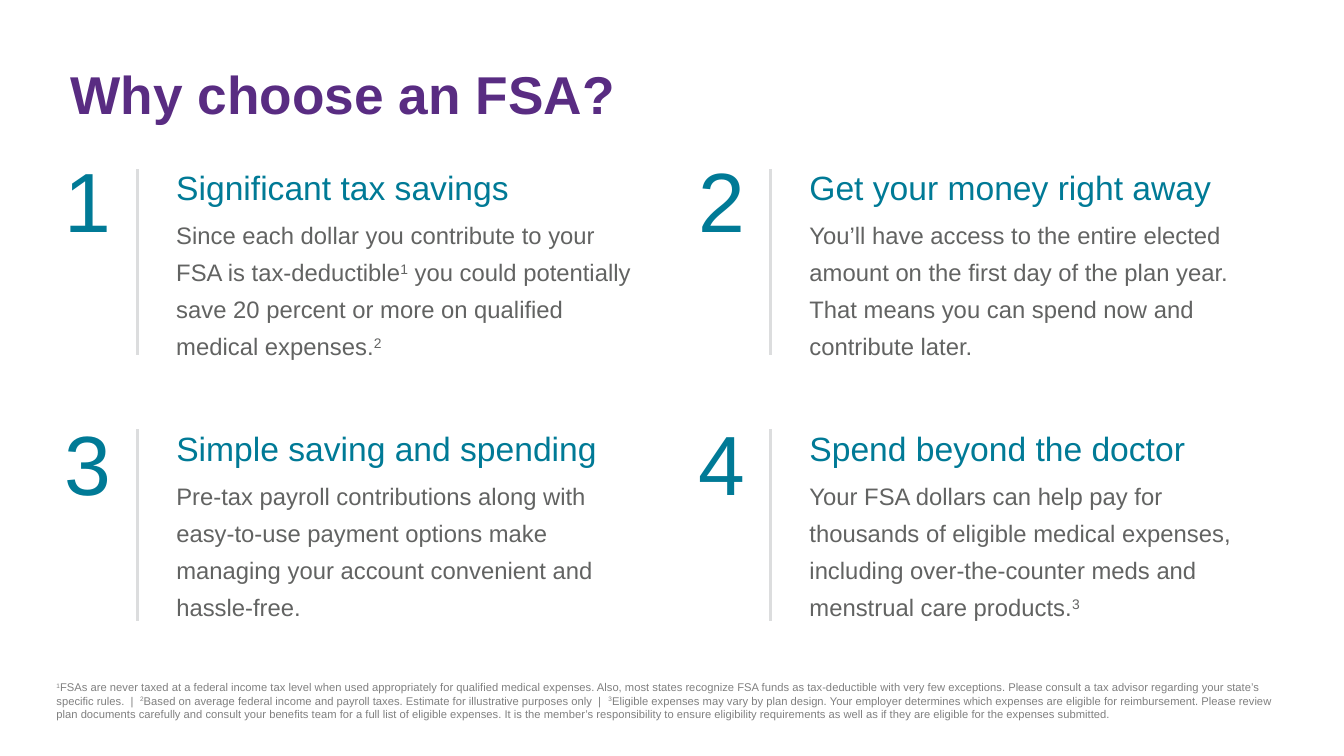
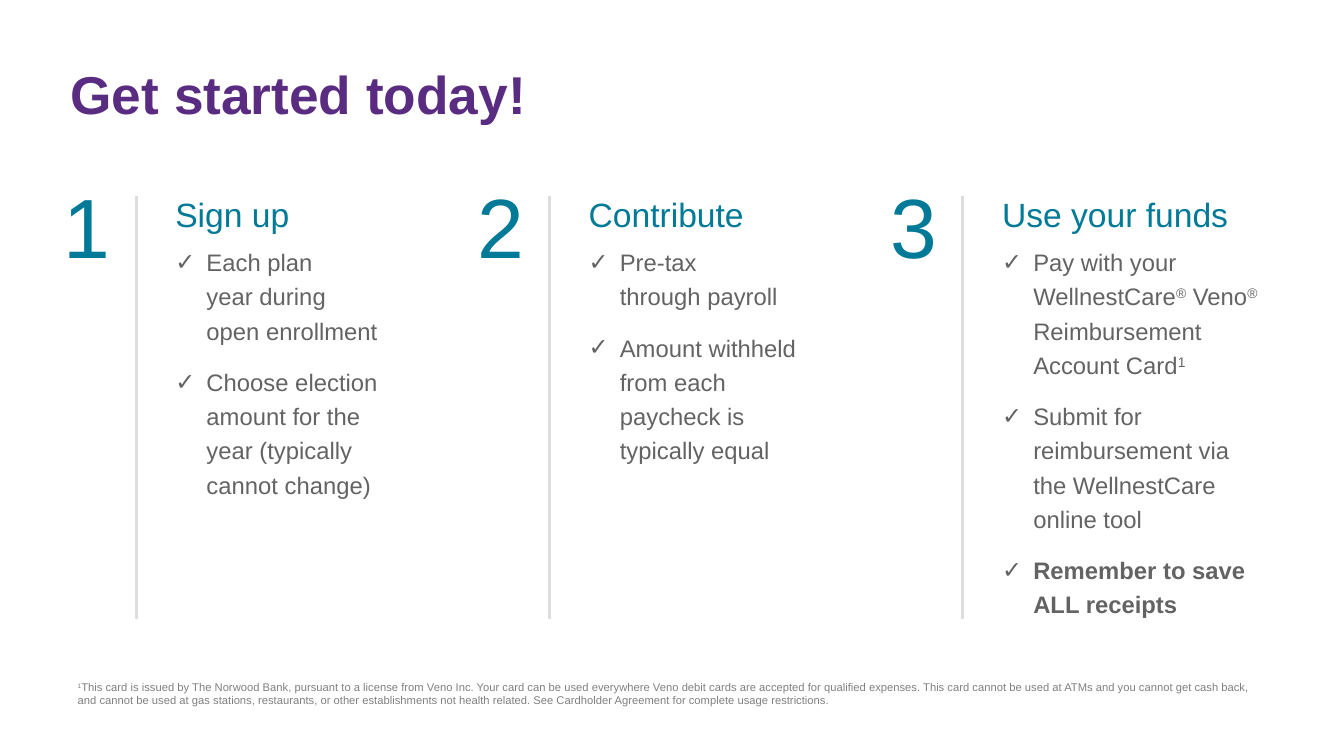
from dataclasses import dataclass

from lxml import etree
from pptx import Presentation
from pptx.dml.color import RGBColor
from pptx.enum.shapes import MSO_CONNECTOR
from pptx.enum.text import MSO_ANCHOR, MSO_AUTO_SIZE, PP_ALIGN
from pptx.oxml.ns import qn
from pptx.util import Inches, Pt

STRAIGHT = MSO_CONNECTOR.STRAIGHT
TOP = MSO_ANCHOR.TOP
NO_FIT = MSO_AUTO_SIZE.NONE
LEFT, CENTER = PP_ALIGN.LEFT, PP_ALIGN.CENTER


@dataclass
class Theme:
    font: str = "Arial"
    purple: str = "592C82"
    teal: str = "007A96"
    body: str = "626362"
    rule: str = "DCDDDE"
    note: str = "808080"
    title_size: int = 38
    number_size: int = 60
    heading_size: int = 24
    body_size: int = 17
    note_size: int = 8


theme = Theme()


def write(para, text, size, color, bold=False):
    """Write text into a paragraph; parts between ^ marks are superscript."""
    for index, part in enumerate(text.split("^")):
        for row, line in enumerate(part.split("\n")):
            if row:
                para.add_line_break()
            if not line:
                continue
            span = para.add_run()
            span.text = line
            span.font.name = theme.font
            span.font.size = Pt(size)
            span.font.bold = bold
            span.font.color.rgb = RGBColor.from_string(color)
            if index % 2:
                span.font._element.set("baseline", "30000")
    # Line breaks take the size of the text around them
    for line_break in para._p.findall(qn("a:br")):
        etree.SubElement(line_break, qn("a:rPr"), sz=str(size * 100))


def add_panel(page, left, rows, width, number, heading, items, bulleted=False):
    """Add a large number, a vertical rule, a heading and its text as a group."""
    number_top, text_top, rule_top, rule_bottom = rows
    panel = page.shapes.add_group_shape()

    box = panel.shapes.add_textbox(
        Inches(left), Inches(number_top), Inches(0.97), Inches(0.37))
    box.text_frame.word_wrap = True
    para = box.text_frame.paragraphs[0]
    para.alignment = CENTER
    write(para, str(number), theme.number_size, theme.teal)

    box = panel.shapes.add_textbox(
        Inches(left + 1.26), Inches(text_top), Inches(width), Inches(1.99))
    frame = box.text_frame
    frame.word_wrap = True
    para = frame.paragraphs[0]
    para.line_spacing = 1.1
    para.space_after = Pt(6 if bulleted else 3)
    write(para, heading, theme.heading_size, theme.teal)
    for item in items:
        para = frame.add_paragraph()
        para.line_spacing = 1.2 if bulleted else 1.3
        para.space_after = Pt(12 if bulleted else 3)
        if bulleted:
            props = para._p.get_or_add_pPr()
            props.set("marL", str(Inches(0.31)))
            props.set("indent", str(Inches(-0.31)))
            etree.SubElement(props, qn("a:buFont"), typeface=theme.font)
            etree.SubElement(props, qn("a:buChar"), char="✓")
        # A leading * marks a bold item
        write(para, item.lstrip("*"), theme.body_size, theme.body, item.startswith("*"))

    rule_left = Inches(left + 0.97)
    rule = panel.shapes.add_connector(
        STRAIGHT, rule_left, Inches(rule_top), rule_left, Inches(rule_bottom))
    rule.line.color.rgb = RGBColor.from_string(theme.rule)
    rule.line.width = Pt(2)
    etree.SubElement(rule._element.spPr, qn("a:effectLst"))


deck = Presentation()
deck.slide_width = Inches(13.33)
deck.slide_height = Inches(7.5)

# Title and footnote of each page: title, footnote left, top, width, height, text
page_texts = [
    ("Why choose an FSA?", (0.43, 6.62, 12.5, 0.82),
     "^1^FSAs are never taxed at a federal income tax level when used appropriately for "
     "qualified medical expenses. Also, most states recognize FSA funds as tax-deductible "
     "with very few exceptions. Please consult a tax advisor regarding your state’s specific "
     "rules.\u00a0 |  ^2^Based on average federal income and payroll taxes. Estimate for "
     "illustrative purposes only  |  ^3^Eligible expenses may vary by plan design. Your "
     "employer determines which expenses are eligible for reimbursement. Please review plan "
     "documents carefully and consult your benefits team for a full list of eligible "
     "expenses. It is the member’s responsibility to ensure eligibility requirements as well "
     "as if they are eligible for the expenses submitted.".replace("\u00a0", " ")),
    ("Get started today!", (0.64, 6.62, 12.05, 0.54),
     "^1^This card is issued by The Norwood Bank, pursuant to a license from Veno Inc. Your "
     "card can be used everywhere Veno debit cards are accepted for qualified expenses. This "
     "card cannot be used at ATMs and you cannot get cash back, and cannot be used at gas "
     "stations, restaurants, or other establishments not health related. See Cardholder "
     "Agreement for complete usage restrictions."),
]
pages = []
for title_text, note_place, note_text in page_texts:
    page = deck.slides.add_slide(deck.slide_layouts[5])
    pages.append(page)

    title = page.shapes.title
    title.left, title.top = Inches(0.6), Inches(0.3)
    title.width, title.height = Inches(11.08), Inches(1)
    frame = title.text_frame
    frame.auto_size = NO_FIT
    frame.vertical_anchor = TOP
    frame.margin_left = frame.margin_right = Inches(0.1)
    frame.margin_top = frame.margin_bottom = Inches(0.1)
    para = frame.paragraphs[0]
    para.alignment = LEFT
    para.line_spacing = Pt(60.8)
    write(para, title_text, theme.title_size, theme.purple, bold=True)

    note = page.shapes.add_textbox(*[Inches(length) for length in note_place])
    frame = note.text_frame
    frame.word_wrap = True
    frame.margin_left = frame.margin_right = Inches(0.13)
    frame.margin_top = frame.margin_bottom = Inches(0.13)
    write(frame.paragraphs[0], note_text, theme.note_size, theme.note)

# Page 1: reasons in a grid of two by two
reasons = [
    ("Significant tax savings",
     "Since each dollar you contribute to your\nFSA is tax-deductible^1^ you could "
     "potentially save 20 percent or more on qualified\nmedical expenses.^2^"),
    ("Get your money right away",
     "You’ll have access to the entire elected amount on the first day of the plan year.\n"
     "That means you can spend now and contribute later."),
    ("Simple saving and spending",
     "Pre-tax payroll contributions along with easy-to-use payment options make managing "
     "your account convenient and hassle-free."),
    ("Spend beyond the doctor",
     "Your FSA dollars can help pay for thousands of eligible medical expenses, including "
     "over-the-counter meds and menstrual care products.^3^"),
]
# Tops of number and text, then top and bottom of the rule
grid_rows = [(1.42, 1.57, 1.68, 3.52), (4.03, 4.16, 4.26, 6.16)]
grid_widths = [4.94, 4.41]
for index, (heading, text) in enumerate(reasons):
    row, column = divmod(index, 2)
    add_panel(pages[0], 0.39 + 6.28 * column, grid_rows[row], grid_widths[row],
              index + 1, heading, [text])

# Page 2: steps in three columns
steps = [
    ("Sign up", 2.26,
     ["Each plan\nyear during\nopen enrollment",
      "Choose election amount for the year (typically cannot change)"]),
    ("Contribute", 2.26,
     ["Pre-tax\nthrough payroll",
      "Amount withheld from each paycheck is typically equal"]),
    ("Use your funds", 2.74,
     ["Pay with your WellnestCare^®^ Veno^®^ Reimbursement Account Card^1^",
      "Submit for reimbursement via\nthe WellnestCare online tool",
      "*Remember to save\nALL receipts"]),
]
step_rows = (1.68, 1.83, 1.94, 6.14)
for index, (heading, width, items) in enumerate(steps):
    add_panel(pages[1], 0.38 + 4.1 * index, step_rows, width,
              index + 1, heading, items, bulleted=True)

deck.save("out.pptx")
